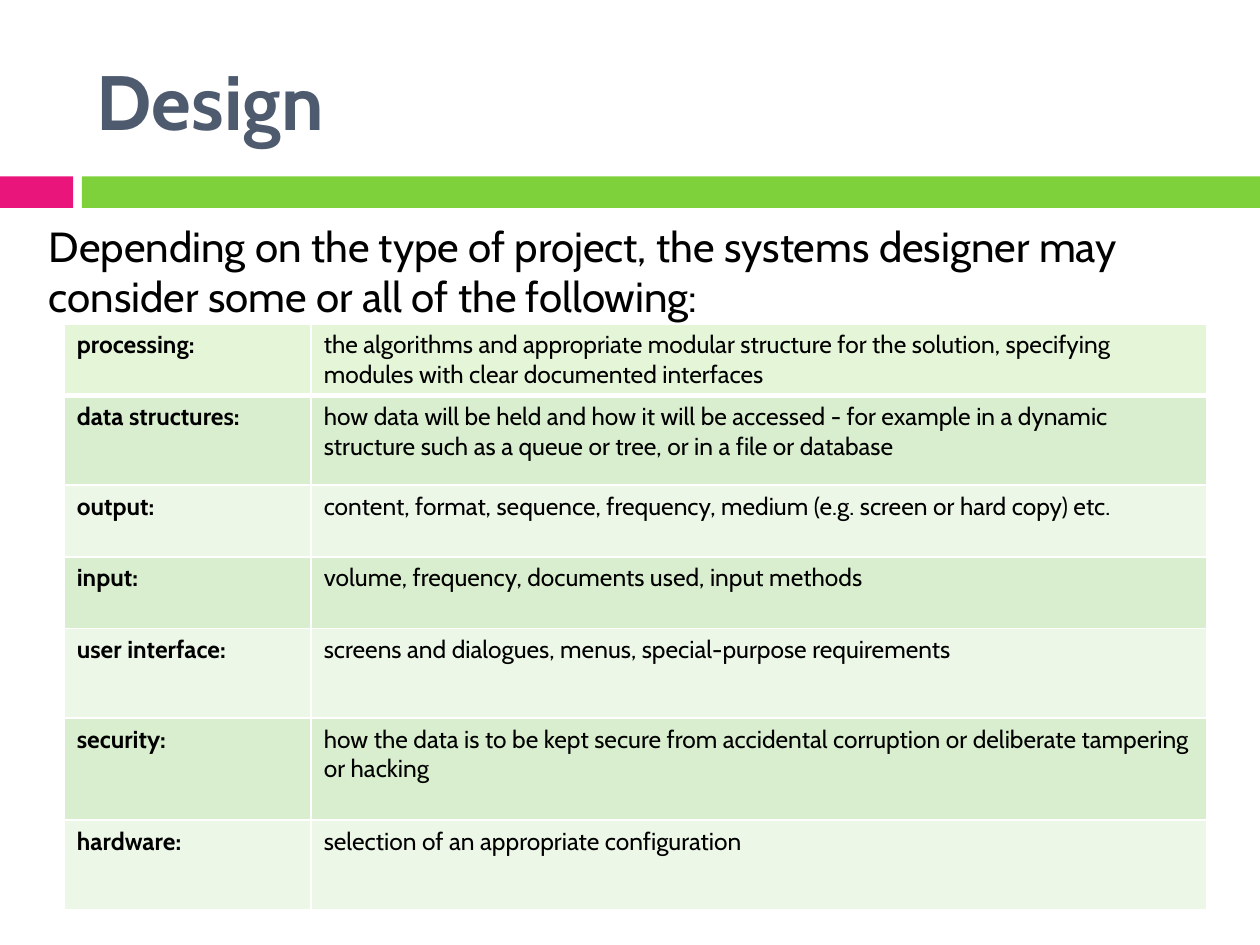
from lxml import etree
from pptx import Presentation
from pptx import util as u
from pptx.dml.color import RGBColor
from pptx.enum import shapes, text
from pptx.oxml import ns

PINK = RGBColor(0xEA, 0x15, 0x7A)
GREEN = RGBColor(0x7F, 0xD1, 0x3B)
SLATE = RGBColor(0x4E, 0x5B, 0x6F)
BLACK = RGBColor(0x00, 0x00, 0x00)
WHITE = RGBColor(0xFF, 0xFF, 0xFF)
TOP_ROW = RGBColor(0xE5, 0xF6, 0xD8)
BANDS = [RGBColor(0xEC, 0xF7, 0xE8), RGBColor(0xD8, 0xEE, 0xCE)]

COLUMN_WIDTHS = [1.96, 7.11]
CONSIDERATIONS = [
    (0.57, "processing:", "the algorithms and appropriate modular structure for the solution, "
                          "specifying modules with clear documented interfaces"),
    (0.71, "data structures:", "how data will be held and how it will be accessed - for example in "
                               "a dynamic structure such as a queue or tree, or in a file or database"),
    (0.57, "output:", "content, format, sequence, frequency, medium (e.g. screen or hard copy) etc."),
    (0.57, "input:", "volume, frequency, documents used, input methods"),
    (0.71, "user interface:", "screens and dialogues, menus, special-purpose requirements"),
    (0.81, "security:", "how the data is to be kept secure from accidental corruption or "
                        "deliberate tampering or hacking"),
    (0.71, "hardware:", "selection of an appropriate configuration"),
]


class SlideBuilder:
    font = "Cabin"

    def __init__(self, page):
        self.page = page

    def add_span(self, para, words, size, color=BLACK, bold=False):
        span = para.add_run()
        span.text = words
        span.font.name = self.font
        span.font.size = u.Pt(size)
        span.font.bold = bold
        span.font.color.rgb = color

    def add_bar(self, left, top, width, height, color):
        bar = self.page.shapes.add_shape(
            shapes.MSO_SHAPE.RECTANGLE, *map(u.Inches, (left, top, width, height)))
        bar.shadow.inherit = False
        bar.fill.solid()
        bar.fill.fore_color.rgb = color
        bar.line.fill.background()

    def add_text(self, place, words, size, color=BLACK, bold=False,
                 anchor=text.MSO_ANCHOR.TOP, space_before=0):
        box = self.page.shapes.add_textbox(*map(u.Inches, place))
        frame = box.text_frame
        frame.word_wrap = True
        frame.vertical_anchor = anchor
        para = frame.paragraphs[0]
        para.space_before = u.Pt(space_before)
        self.add_span(para, words, size, color, bold)

    def add_borders(self, cell, bottom=1, top=1):
        """Draw white cell borders with the given widths in points."""
        properties = cell._tc.get_or_add_tcPr()
        widths = {"a:lnL": 1, "a:lnR": 1, "a:lnT": top, "a:lnB": bottom}
        for index, (tag, width) in enumerate(widths.items()):
            line = etree.Element(ns.qn(tag), w=str(u.Pt(width)))
            fill = etree.SubElement(line, ns.qn("a:solidFill"))
            etree.SubElement(fill, ns.qn("a:srgbClr"), val=str(WHITE))
            properties.insert(index, line)

    def add_table(self, left, top, rows, widths):
        height = sum(row[0] for row in rows)
        place = map(u.Inches, (left, top, sum(widths), height))
        table = self.page.shapes.add_table(len(rows), len(widths), *place).table
        table.first_row = table.horz_banding = False
        for column, width in zip(table.columns, widths):
            column.width = u.Inches(width)
        for index, (row_height, *entries) in enumerate(rows):
            table.rows[index].height = u.Inches(row_height)
            for position, words in enumerate(entries):
                cell = table.cell(index, position)
                cell.fill.solid()
                cell.fill.fore_color.rgb = BANDS[index % 2] if index else TOP_ROW
                self.add_borders(cell, bottom=1 if index else 3, top=3 if index == 1 else 1)
                self.add_span(cell.text_frame.paragraphs[0], words, 14, bold=position == 0)


def main():
    deck = Presentation()
    deck.slide_width, deck.slide_height = u.Inches(10), u.Inches(7.5)
    builder = SlideBuilder(deck.slides.add_slide(deck.slide_layouts[6]))
    builder.add_bar(0, 1.4, 0.58, 0.25, PINK)
    builder.add_bar(0.65, 1.4, 9.35, 0.25, GREEN)
    builder.add_text((0.67, 0.25, 8.92, 1.08), "Design", 44, SLATE, bold=True,
                     anchor=text.MSO_ANCHOR.MIDDLE)
    builder.add_text((0.29, 1.7, 9.69, 1.18),
                     "Depending on the type of project, the systems designer may "
                     "consider some or all of the following:", 24, space_before=7)
    builder.add_table(0.51, 2.57, CONSIDERATIONS, COLUMN_WIDTHS)
    deck.save("out.pptx")


if __name__ == "__main__":
    main()
